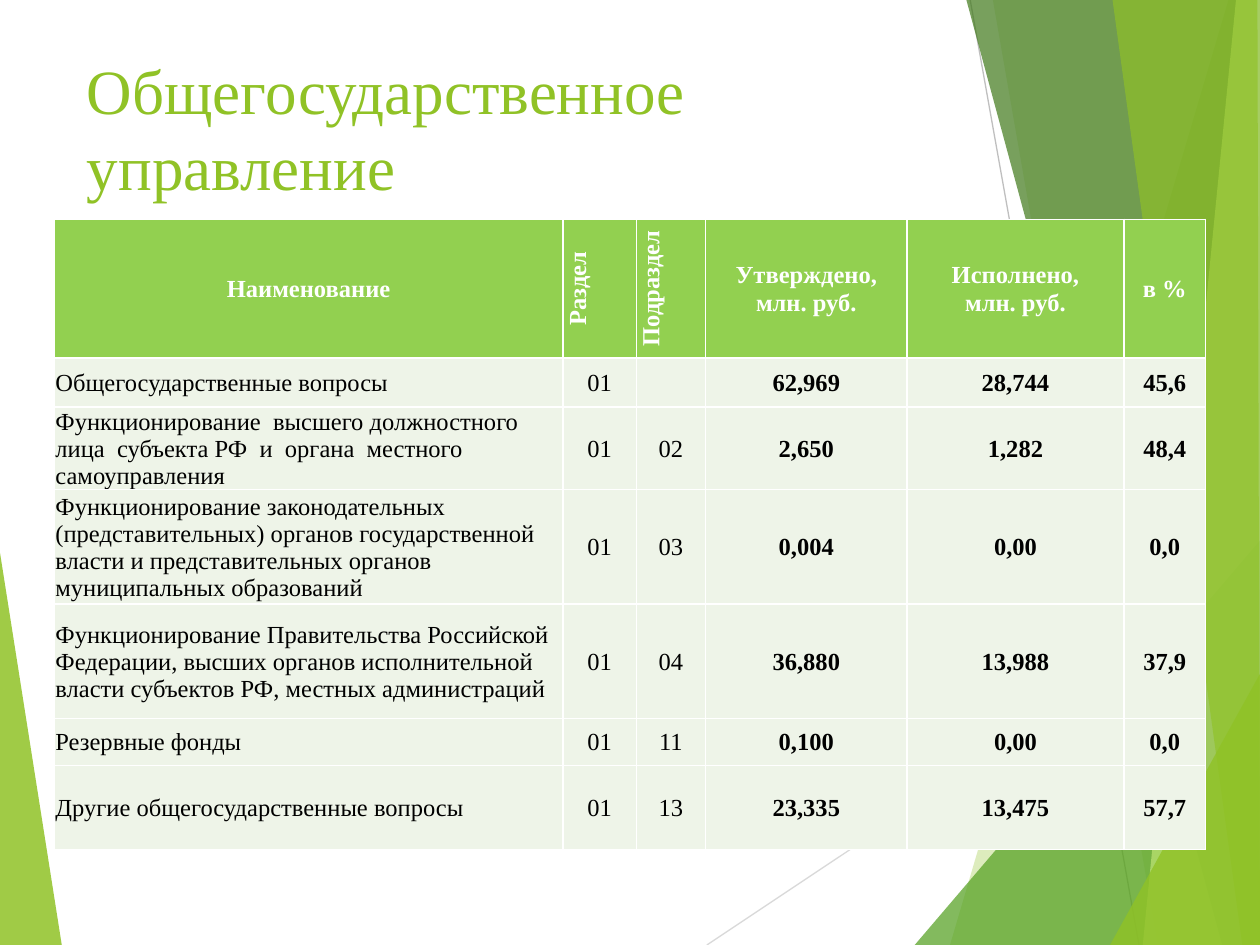
import pptx
import pptx.dml.color
import pptx.enum.text
import pptx.oxml
import pptx.oxml.ns
import pptx.util
from lxml import etree

RGBColor = pptx.dml.color.RGBColor
LIME = RGBColor(0x90, 0xC2, 0x26)
GREEN = RGBColor(0x54, 0xA0, 0x21)
DARK_GREEN = RGBColor(0x3F, 0x78, 0x19)
PALE_LIME = RGBColor(0xC0, 0xE4, 0x74)
LIGHT_GRAY = RGBColor(0xD9, 0xD9, 0xD9)
GRAY = RGBColor(0xBF, 0xBF, 0xBF)
HEADER_FILL = RGBColor(0x92, 0xD0, 0x50)
BODY_FILL = RGBColor(0xEE, 0xF4, 0xE8)
WHITE = RGBColor(0xFF, 0xFF, 0xFF)
BLACK = RGBColor(0x00, 0x00, 0x00)
FONT = "Times New Roman"

WIDTH = pptx.util.Inches(10)
HEIGHT = pptx.util.Inches(7.5)

# Points are percentages of the slide's width and height.
LEFT_WEDGE = ([(0, 58.5), (4.9, 100), (0, 100)], LIME, 85)
RAYS = [
    ((56.1, 100), (100, 61), LIGHT_GRAY),
    ((77, 0), (90.4, 100), GRAY),
]
RIGHT_FACETS = [
    ([(97.5, 0), (75.4, 100), (100, 100), (100, 0)], LIME, 30),
    ([(78.8, 0), (91.9, 100), (100, 100), (100, 0)], LIME, 20),
    ([(72.6, 100), (100, 57.2), (100, 100)], GREEN, 72),
    ([(76.7, 0), (97, 100), (100, 100), (100, 0)], DARK_GREEN, 70),
    ([(98.1, 0), (90.7, 100), (100, 100), (100, 0)], PALE_LIME, 70),
    ([(88.3, 0), (98.6, 100), (100, 100), (99.8, 0)], LIME, 65),
    ([(88.1, 100), (100, 71.3), (100, 100)], LIME, 80),
]

COLUMNS = [40.4, 5.8, 5.5, 16, 17.2, 6.5]
ROWS = [14.67, 5.2, 8.67, 12.13, 12.13, 4.93, 8.93]
SIDEWAYS_COLUMNS = (1, 2)
FIRST_AMOUNT_COLUMN = 3
BUDGET = [
    ["Наименование", "Раздел", "Подраздел", "Утверждено,\nмлн. руб.",
     "Исполнено,\nмлн. руб.", "в %"],
    ["Общегосударственные вопросы", "01", "", "62,969", "28,744", "45,6"],
    ["Функционирование  высшего должностного  лица  субъекта РФ  и  органа  "
     "местного  самоуправления", "01", "02", "2,650", "1,282", "48,4"],
    ["Функционирование законодательных (представительных) органов "
     "государственной власти и представительных органов муниципальных "
     "образований", "01", "03", "0,004", "0,00", "0,0"],
    ["Функционирование Правительства Российской Федерации, высших органов "
     "исполнительной власти субъектов РФ, местных администраций",
     "01", "04", "36,880", "13,988", "37,9"],
    ["Резервные фонды", "01", "11", "0,100", "0,00", "0,0"],
    ["Другие общегосударственные вопросы", "01", "13", "23,335", "13,475", "57,7"],
]


def across(percent):
    return round(WIDTH * percent / 100)


def down(percent):
    return round(HEIGHT * percent / 100)


def add_facet(page, points, color, opacity):
    corners = [(across(x), down(y)) for x, y in points]
    builder = page.shapes.build_freeform(*corners[0])
    builder.add_line_segments(corners[1:], close=True)
    facet = builder.convert_to_shape()
    facet.shadow.inherit = False
    facet.line.fill.background()
    facet.fill.solid()
    facet.fill.fore_color.rgb = color
    color_element = facet.fill._xPr.find(".//" + pptx.oxml.ns.qn("a:srgbClr"))
    alpha = etree.SubElement(color_element, pptx.oxml.ns.qn("a:alpha"))
    alpha.set("val", str(opacity * 1000))


def add_ray(page, start, end, color):
    ray = page.shapes.add_connector(
        1, across(start[0]), down(start[1]), across(end[0]), down(end[1]))
    ray.line.color.rgb = color
    ray.line.width = pptx.util.Pt(0.75)
    etree.SubElement(ray._element.spPr, pptx.oxml.ns.qn("a:effectLst"))


def format_font(font, size, color, bold=False):
    font.name = FONT
    font.size = pptx.util.Pt(size)
    font.color.rgb = color
    font.bold = bold


def set_title(page, text):
    title = page.shapes.title
    title.left, title.top = across(5.9), down(3.9)
    title.width, title.height = across(69.4), down(19.2)
    frame = title.text_frame
    frame.text = text
    frame.word_wrap = True
    frame.vertical_anchor = pptx.enum.text.MSO_ANCHOR.MIDDLE
    paragraph = frame.paragraphs[0]
    paragraph.alignment = pptx.enum.text.PP_ALIGN.LEFT
    format_font(paragraph.font, 36, LIME)


def add_borders(properties):
    for side in ("lnL", "lnR", "lnT", "lnB"):
        border = etree.SubElement(properties, pptx.oxml.ns.qn("a:" + side))
        border.set("w", str(pptx.util.Pt(1)))
        fill = etree.SubElement(border, pptx.oxml.ns.qn("a:solidFill"))
        color = etree.SubElement(fill, pptx.oxml.ns.qn("a:srgbClr"))
        color.set("val", str(WHITE))


def fill_cell(cell, text, row, column):
    header = row == 0
    properties = cell._tc.get_or_add_tcPr()
    add_borders(properties)
    if header and column in SIDEWAYS_COLUMNS:
        properties.set("vert", "vert270")
    cell.fill.solid()
    cell.fill.fore_color.rgb = HEADER_FILL if header else BODY_FILL
    cell.margin_left = cell.margin_right = cell.margin_top = pptx.util.Inches(0.01)
    cell.margin_bottom = 0
    cell.vertical_anchor = pptx.enum.text.MSO_ANCHOR.MIDDLE
    cell.text = text
    align = pptx.enum.text.PP_ALIGN
    for paragraph in cell.text_frame.paragraphs:
        paragraph.alignment = align.CENTER if header or column else align.LEFT
        format_font(paragraph.font, 14, WHITE if header else BLACK,
                    header or column >= FIRST_AMOUNT_COLUMN)


def add_budget_table(page):
    table = page.shapes.add_table(
        len(ROWS), len(COLUMNS), across(4.3), down(23.2),
        across(sum(COLUMNS)), down(sum(ROWS))).table
    for column, share in zip(table.columns, COLUMNS):
        column.width = across(share)
    for row, share in zip(table.rows, ROWS):
        row.height = down(share)
    for row, texts in enumerate(BUDGET):
        for column, text in enumerate(texts):
            fill_cell(table.cell(row, column), text, row, column)


def main():
    deck = pptx.Presentation()
    deck.slide_width, deck.slide_height = WIDTH, HEIGHT
    page = deck.slides.add_slide(deck.slide_layouts[5])
    add_facet(page, *LEFT_WEDGE)
    for ray in RAYS:
        add_ray(page, *ray)
    for facet in RIGHT_FACETS:
        add_facet(page, *facet)
    set_title(page, "Общегосударственное управление")
    add_budget_table(page)
    deck.save("out.pptx")


if __name__ == "__main__":
    main()
